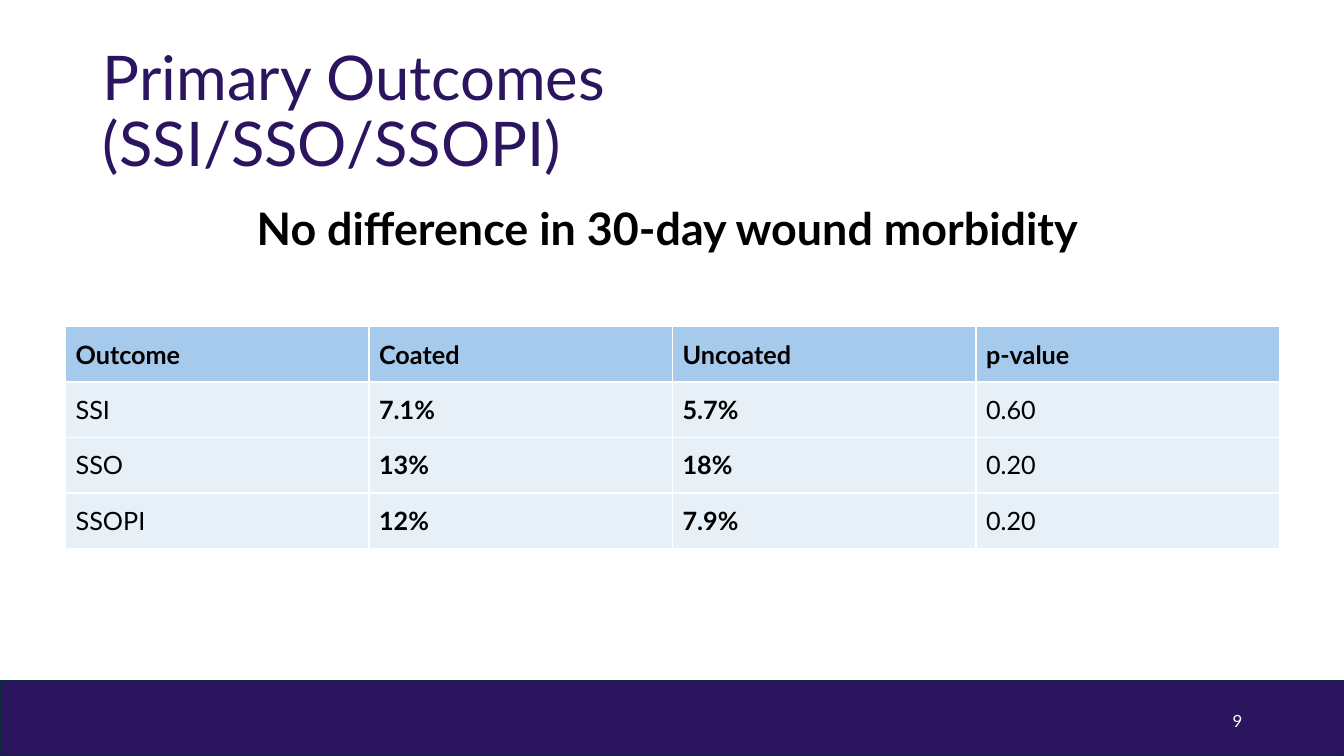
import pptx
import pptx.dml.color
import pptx.enum.shapes
import pptx.enum.text
import pptx.oxml.ns
import pptx.util
from lxml import etree

Inches = pptx.util.Inches
Pt = pptx.util.Pt
ALIGN = pptx.enum.text.PP_ALIGN
ANCHOR = pptx.enum.text.MSO_ANCHOR
FONT = "Lato"
COLORS = {
    "purple": "2B155E",
    "edge": "092A39",
    "head": "A6CAEC",
    "row": "E7F0F7",
    "black": "000000",
    "white": "FFFFFF",
}
ROWS = [
    ["Outcome", "Coated", "Uncoated", "p-value"],
    ["SSI", "7.1%", "5.7%", "0.60"],
    ["SSO", "13%", "18%", "0.20"],
    ["SSOPI", "12%", "7.9%", "0.20"],
]


def color(name):
    return pptx.dml.color.RGBColor.from_string(COLORS[name])


def write(frame, text, size, tint, bold=False, align=ALIGN.LEFT, space=None):
    para = frame.paragraphs[0]
    para.alignment = align
    para.line_spacing = space
    run = para.add_run()
    run.text = text
    run.font.name = FONT
    run.font.size = Pt(size)
    run.font.bold = bold
    run.font.color.rgb = color(tint)


def add_band(slide):
    band = slide.shapes.add_shape(
        pptx.enum.shapes.MSO_SHAPE.RECTANGLE,
        Inches(0), Inches(6.76), Inches(13.33), Inches(0.74))
    band.shadow.inherit = False
    band.fill.solid()
    band.fill.fore_color.rgb = color("purple")
    band.line.color.rgb = color("edge")
    band.line.width = Pt(1.5)


def set_title(slide, text):
    title = slide.shapes.title
    title.left, title.top = Inches(0.92), Inches(0.4)
    title.width, title.height = Inches(9.21), Inches(1.45)
    frame = title.text_frame
    frame.word_wrap = True
    frame.vertical_anchor = ANCHOR.MIDDLE
    write(frame, text, 44, "purple", space=0.9)


def add_text(slide, box, text, size, tint, anchor, **style):
    shape = slide.shapes.add_textbox(*map(Inches, box))
    frame = shape.text_frame
    frame.word_wrap = True
    frame.vertical_anchor = anchor
    write(frame, text, size, tint, **style)


def add_border(cell):
    props = cell._tc.get_or_add_tcPr()
    qn = pptx.oxml.ns.qn
    for side in ("lnL", "lnR", "lnT", "lnB"):
        line = etree.SubElement(props, qn("a:" + side), w=str(Pt(1)))
        fill = etree.SubElement(line, qn("a:solidFill"))
        etree.SubElement(fill, qn("a:srgbClr"), val=COLORS["white"])


def add_table(slide, rows):
    count = len(rows[0])
    frame = slide.shapes.add_table(
        len(rows), count,
        Inches(0.65), Inches(3.24), Inches(3.01 * count), Inches(0.55 * len(rows)))
    table = frame.table
    for col in table.columns:
        col.width = Inches(3.01)
    for i, row in enumerate(rows):
        table.rows[i].height = Inches(0.55)
        for j, text in enumerate(row):
            cell = table.cell(i, j)
            add_border(cell)
            cell.fill.solid()
            cell.fill.fore_color.rgb = color("row" if i else "head")
            cell.vertical_anchor = ANCHOR.MIDDLE
            write(cell.text_frame, text, 18, "black", bold=i == 0 or j in (1, 2))


def main():
    deck = pptx.Presentation()
    deck.slide_width, deck.slide_height = Inches(13.33), Inches(7.5)
    slide = deck.slides.add_slide(deck.slide_layouts[5])
    add_band(slide)
    set_title(slide, "Primary Outcomes (SSI/SSO/SSOPI)")
    add_text(slide, (0.92, 2, 11.5, 0.6), "No difference in 30-day wound morbidity ",
             32, "black", ANCHOR.TOP, bold=True, align=ALIGN.CENTER, space=0.9)
    add_text(slide, (9.42, 6.95, 3, 0.4), "9", 12, "white", ANCHOR.MIDDLE,
             align=ALIGN.RIGHT)
    add_table(slide, ROWS)
    deck.save("out.pptx")


if __name__ == "__main__":
    main()
